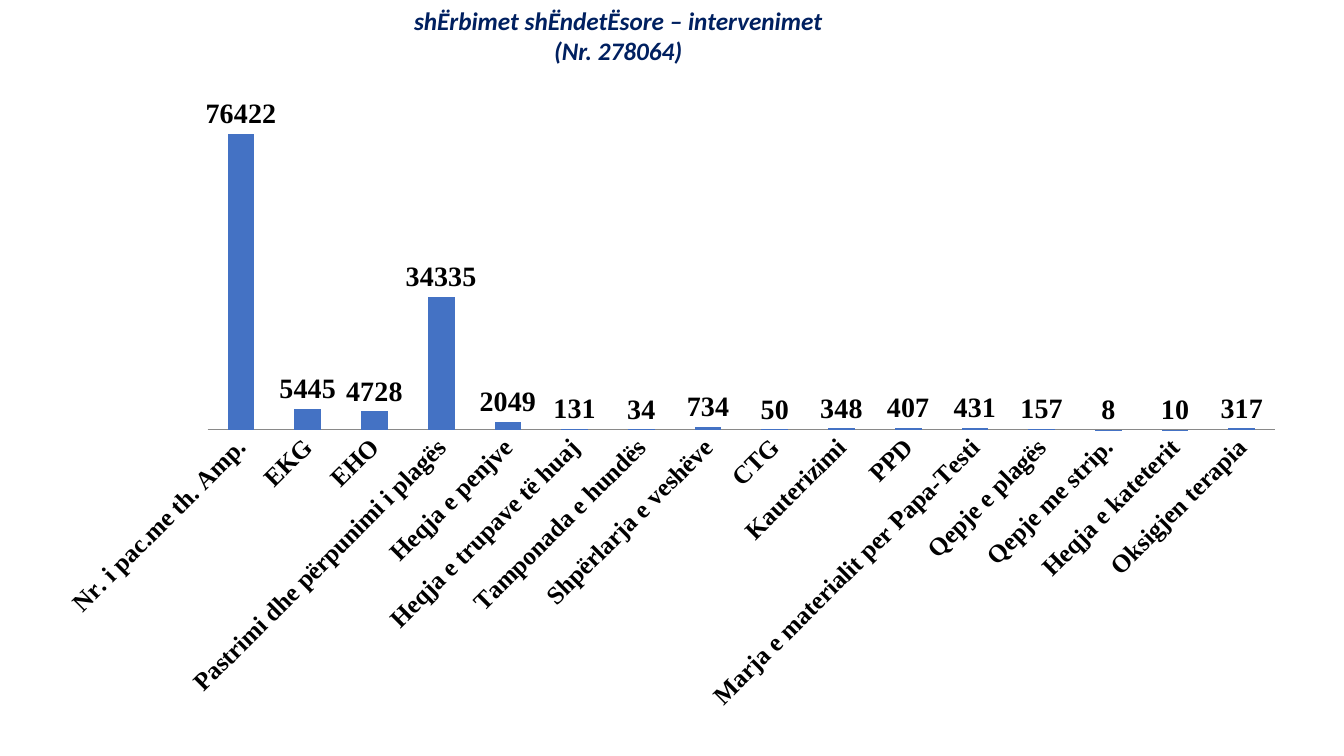
from dataclasses import dataclass

from lxml import etree
from pptx import Presentation, util as u
from pptx.chart.data import CategoryChartData
from pptx.dml.color import RGBColor
from pptx.enum import chart as ch, text
from pptx.oxml.ns import qn

COLORS = {"title": "002060", "bar": "4472C4", "text": "000000", "axis": "898989"}
SERIF = "Times New Roman"


@dataclass
class Intervention:
    name: str
    count: int


INTERVENTIONS = [
    Intervention("Nr. i pac.me th. Amp.", 76422),
    Intervention("EKG", 5445),
    Intervention("EHO", 4728),
    Intervention("Pastrimi dhe përpunimi i plagës", 34335),
    Intervention("Heqja e penjve", 2049),
    Intervention("Heqja e trupave të huaj", 131),
    Intervention("Tamponada e hundës", 34),
    Intervention("Shpërlarja e veshëve", 734),
    Intervention("CTG", 50),
    Intervention("Kauterizimi", 348),
    Intervention("PPD", 407),
    Intervention("Marja e materialit per Papa-Testi", 431),
    Intervention("Qepje e plagës", 157),
    Intervention("Qepje me strip.", 8),
    Intervention("Heqja e kateterit", 10),
    Intervention("Oksigjen terapia", 317),
]


def set_font(font, name: str, size: float, color: str, italic: bool = False) -> None:
    font.name, font.size = name, u.Pt(size)
    font.bold, font.italic = True, italic
    font.color.rgb = RGBColor.from_string(COLORS[color])


def add_title(s, lines: list[str]) -> None:
    sp = s.shapes.title
    sp.left, sp.top, sp.width, sp.height = u.Cm(7.11), u.Cm(0), u.Cm(16.94), u.Cm(1.8)
    tf = sp.text_frame
    tf.text = "\n".join(lines)
    tf.word_wrap = True
    tf.auto_size = text.MSO_AUTO_SIZE.NONE
    tf.vertical_anchor = text.MSO_ANCHOR.TOP
    for p in tf.paragraphs:
        p.alignment = text.PP_ALIGN.CENTER
        set_font(p.font, "Calibri", 18, "title", italic=True)


def place_plot(chart, x: float, y: float, w: float, h: float) -> None:
    """Fix the inner plot area, in fractions of the chart."""
    area = chart.plots[0]._element.getparent()
    layout = area.find(qn("c:layout"))
    if layout is None:
        layout = etree.Element(qn("c:layout"))
        area.insert(0, layout)
    manual = etree.SubElement(layout, qn("c:manualLayout"))
    settings = [("layoutTarget", "inner"), ("xMode", "edge"), ("yMode", "edge"),
                ("x", x), ("y", y), ("w", w), ("h", h)]
    for tag, value in settings:
        etree.SubElement(manual, qn(f"c:{tag}")).set("val", str(value))


def add_column_chart(s, items: list[Intervention]) -> None:
    data = CategoryChartData()
    data.categories = [item.name for item in items]
    data.add_series("Series 1", [item.count for item in items])
    chart = s.shapes.add_chart(
        ch.XL_CHART_TYPE.COLUMN_CLUSTERED,
        u.Cm(1.12), u.Cm(1.73), u.Cm(31.65), u.Cm(16.54), data).chart
    chart.has_legend = chart.has_title = False
    chart.font.name, chart.font.size = "Calibri", u.Pt(18)

    # Columns and their values
    plot = chart.plots[0]
    plot.gap_width, plot.overlap, plot.vary_by_categories = 150, -25, False
    fill = plot.series[0].format.fill
    fill.solid()
    fill.fore_color.rgb = RGBColor.from_string(COLORS["bar"])
    plot.has_data_labels = True
    labels = plot.data_labels
    labels.show_value = True
    labels.position = ch.XL_LABEL_POSITION.OUTSIDE_END
    set_font(labels.font, SERIF, 20, "text")

    # Axes
    cat, val = chart.category_axis, chart.value_axis
    cat.major_tick_mark = cat.minor_tick_mark = ch.XL_TICK_MARK.NONE
    cat.format.line.color.rgb = RGBColor.from_string(COLORS["axis"])
    cat.format.line.width = u.Pt(0.75)
    set_font(cat.tick_labels.font, SERIF, 18, "text")
    cat._element.find(qn("c:txPr")).find(qn("a:bodyPr")).set("rot", str(-45 * 60000))
    val.has_major_gridlines = val.visible = False
    val.minimum_scale, val.maximum_scale = 0, 90000
    place_plot(chart, 0.13, 0.02, 0.85, 0.53)


def main() -> None:
    prs = Presentation()
    prs.slide_width, prs.slide_height = u.Cm(33.87), u.Cm(19.05)
    s = prs.slides.add_slide(prs.slide_layouts[5])
    add_title(s, ["shËrbimet shËndetËsore – intervenimet", "(Nr. 278064)"])
    add_column_chart(s, INTERVENTIONS)
    prs.save("out.pptx")


if __name__ == "__main__":
    main()
